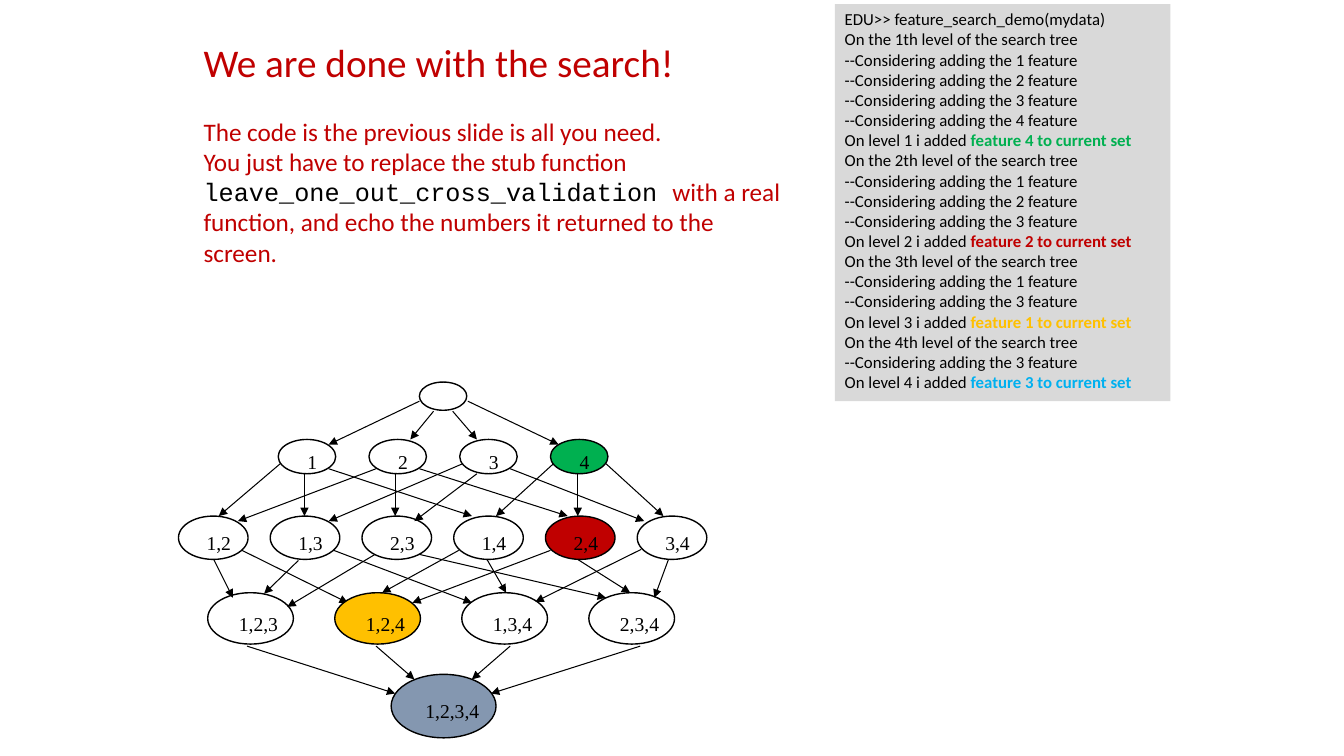
from typing import NamedTuple

from lxml import etree
from pptx import Presentation
from pptx.dml.color import RGBColor
from pptx.enum.shapes import MSO_CONNECTOR, MSO_SHAPE
from pptx.enum.text import MSO_ANCHOR, MSO_AUTO_SIZE, PP_ALIGN
from pptx.oxml.ns import qn
from pptx.util import Inches, Pt

RECTANGLE = MSO_SHAPE.RECTANGLE
OVAL = MSO_SHAPE.OVAL
STRAIGHT = MSO_CONNECTOR.STRAIGHT
FIT_SHAPE = MSO_AUTO_SIZE.SHAPE_TO_FIT_TEXT
TOP = MSO_ANCHOR.TOP
LEFT = PP_ALIGN.LEFT

BLACK = RGBColor(0x00, 0x00, 0x00)
GRAY = RGBColor(0xD9, 0xD9, 0xD9)
GREEN = RGBColor(0x00, 0xB0, 0x50)
RED = RGBColor(0xC0, 0x00, 0x00)
AMBER = RGBColor(0xFF, 0xC0, 0x00)
BLUE = RGBColor(0x00, 0xB0, 0xF0)
SLATE = RGBColor(0x84, 0x97, 0xB0)

SANS = "Calibri"
MONO = "Courier New"
SERIF = "Times New Roman"


class TextRun(NamedTuple):
    text: str
    size: float
    color: RGBColor = BLACK
    font: str = SANS
    bold: bool = False


class Level(NamedTuple):
    labels: list[str]
    left: float
    top: float
    step: float
    width: float
    height: float
    label_indent: float = 0
    label_top: float = 0
    label_width: float = 0


class Arrow(NamedTuple):
    start_x: float
    start_y: float
    end_x: float
    end_y: float


class Choice(NamedTuple):
    feature: int
    color: RGBColor


CHOICES = [Choice(4, GREEN), Choice(2, RED), Choice(1, AMBER), Choice(3, BLUE)]
NODE_FILLS = {"4": GREEN, "2,4": RED, "1,2,4": AMBER, "1,2,3,4": SLATE}

LEVELS = [
    Level([""], 4.16, 3.79, 0, 0.47, 0.28),
    Level(["1", "2", "3", "4"], 2.76, 4.36, 0.9, 0.57, 0.34, 0.19, 4.41, 0.3),
    Level(["1,2", "1,3", "2,3", "1,4", "2,4", "3,4"],
          1.77, 5.12, 0.91, 0.69, 0.43, 0.18, 5.22, 0.45),
    Level(["1,2,3", "1,2,4", "1,3,4", "2,3,4"],
          2.06, 5.88, 1.26, 0.85, 0.51, 0.21, 6.02, 0.59),
    Level(["1,2,3,4"], 3.88, 6.69, 0, 1.04, 0.63, 0.24, 6.88, 0.74),
]

ARROWS = [
    Arrow(4.16, 3.98, 3.26, 4.41),
    Arrow(4.3, 4.08, 4.07, 4.36),
    Arrow(4.49, 4.08, 4.73, 4.36),
    Arrow(4.64, 3.98, 5.54, 4.41),
    Arrow(2.78, 4.6, 2.17, 5.12),
    Arrow(3.02, 4.7, 3.02, 5.12),
    Arrow(3.26, 4.65, 4.68, 5.12),
    Arrow(3.73, 4.65, 2.36, 5.17),
    Arrow(3.92, 4.7, 3.92, 5.12),
    Arrow(4.16, 4.65, 5.63, 5.12),
    Arrow(4.59, 4.6, 3.26, 5.17),
    Arrow(4.73, 4.7, 4.11, 5.17),
    Arrow(5.06, 4.65, 6.39, 5.17),
    Arrow(5.49, 4.6, 4.92, 5.12),
    Arrow(5.73, 4.7, 5.73, 5.12),
    Arrow(6.01, 4.6, 6.58, 5.12),
    Arrow(2.12, 5.55, 2.31, 5.93),
    Arrow(2.4, 5.46, 3.45, 5.98),
    Arrow(2.96, 5.56, 2.62, 5.89),
    Arrow(3.31, 5.46, 4.68, 5.98),
    Arrow(3.72, 5.5, 2.85, 6.02),
    Arrow(4.16, 5.5, 6.01, 5.93),
    Arrow(4.55, 5.46, 3.79, 5.88),
    Arrow(4.83, 5.55, 5.02, 5.88),
    Arrow(5.46, 5.46, 4.09, 5.98),
    Arrow(5.73, 5.55, 6.25, 5.88),
    Arrow(6.36, 5.45, 5.31, 5.97),
    Arrow(6.63, 5.55, 6.49, 5.93),
    Arrow(2.45, 6.41, 3.92, 6.88),
    Arrow(3.73, 6.41, 4.11, 6.74),
    Arrow(5.06, 6.41, 4.68, 6.74),
    Arrow(6.35, 6.41, 4.87, 6.88),
]

MESSAGE = [
    [TextRun("We are done with the search!", 28, RED)],
    [TextRun("The code is the previous slide is all you need.", 18, RED)],
    [TextRun("You just have to replace the stub function ", 18, RED),
     TextRun("leave_one_out_cross_validation ", 18, BLACK, MONO),
     TextRun("with a real function, and echo the numbers it returned to the screen.", 18, RED)],
]


def search_log() -> list[list[TextRun]]:
    lines = [[TextRun("EDU>> feature_search_demo(mydata)", 12)]]
    remaining = [1, 2, 3, 4]
    for level, choice in enumerate(CHOICES, 1):
        lines.append([TextRun(f"On the {level}th level of the search tree", 12)])
        for feature in remaining:
            lines.append([TextRun(f"--Considering adding the {feature} feature", 12)])
        added = f"feature {choice.feature} to current set"
        lines.append([TextRun(f"On level {level} i added ", 12),
                      TextRun(added, 12, choice.color, bold=True)])
        remaining.remove(choice.feature)
    return lines


def write_text(shape, lines: list[list[TextRun]], wrap: bool = True) -> None:
    frame = shape.text_frame
    frame.word_wrap = wrap
    frame.auto_size = FIT_SHAPE
    frame.vertical_anchor = TOP
    for index, line in enumerate(lines):
        paragraph = frame.add_paragraph() if index else frame.paragraphs[0]
        paragraph.alignment = LEFT
        for item in line:
            run = paragraph.add_run()
            run.text = item.text
            run.font.size = Pt(item.size)
            run.font.name = item.font
            run.font.bold = item.bold
            run.font.color.rgb = item.color


def add_text_box(slide, left: float, top: float, width: float, height: float,
                 lines: list[list[TextRun]], wrap: bool = True):
    box = slide.shapes.add_textbox(Inches(left), Inches(top), Inches(width), Inches(height))
    write_text(box, lines, wrap)
    return box


def add_log_panel(slide) -> None:
    panel = slide.shapes.add_shape(RECTANGLE, Inches(8.28), Inches(0.04), Inches(3.33), Inches(3.94))
    panel.shadow.inherit = False
    panel.fill.solid()
    panel.fill.fore_color.rgb = GRAY
    panel.line.fill.background()
    write_text(panel, search_log())


def add_arrow(slide, arrow: Arrow) -> None:
    connector = slide.shapes.add_connector(STRAIGHT, *(Inches(value) for value in arrow))
    connector.line.color.rgb = BLACK
    connector.line.width = Pt(0.75)
    etree.SubElement(connector.line._get_or_add_ln(), qn("a:tailEnd"), type="triangle")
    etree.SubElement(connector._element.spPr, qn("a:effectLst"))


def add_level(slide, level: Level) -> None:
    for index, label in enumerate(level.labels):
        left = level.left + index * level.step
        node = slide.shapes.add_shape(OVAL, Inches(left), Inches(level.top),
                                      Inches(level.width), Inches(level.height))
        node.shadow.inherit = False
        if label in NODE_FILLS:
            node.fill.solid()
            node.fill.fore_color.rgb = NODE_FILLS[label]
        else:
            node.fill.background()
        node.line.color.rgb = BLACK
        node.line.width = Pt(1)
        if label:
            add_text_box(slide, left + level.label_indent, level.label_top, level.label_width, 0.34,
                         [[TextRun(label, 14, BLACK, SERIF)]], wrap=False)


def main() -> None:
    presentation = Presentation()
    presentation.slide_width = Inches(13.33)
    presentation.slide_height = Inches(7.5)
    slide = presentation.slides.add_slide(presentation.slide_layouts[6])
    add_log_panel(slide)
    message = add_text_box(slide, 1.92, 0.33, 5.92, 2.39, MESSAGE)
    message.text_frame.paragraphs[1].space_before = Pt(22)
    for arrow in ARROWS:
        add_arrow(slide, arrow)
    for level in LEVELS:
        add_level(slide, level)
    presentation.save("out.pptx")


if __name__ == "__main__":
    main()
